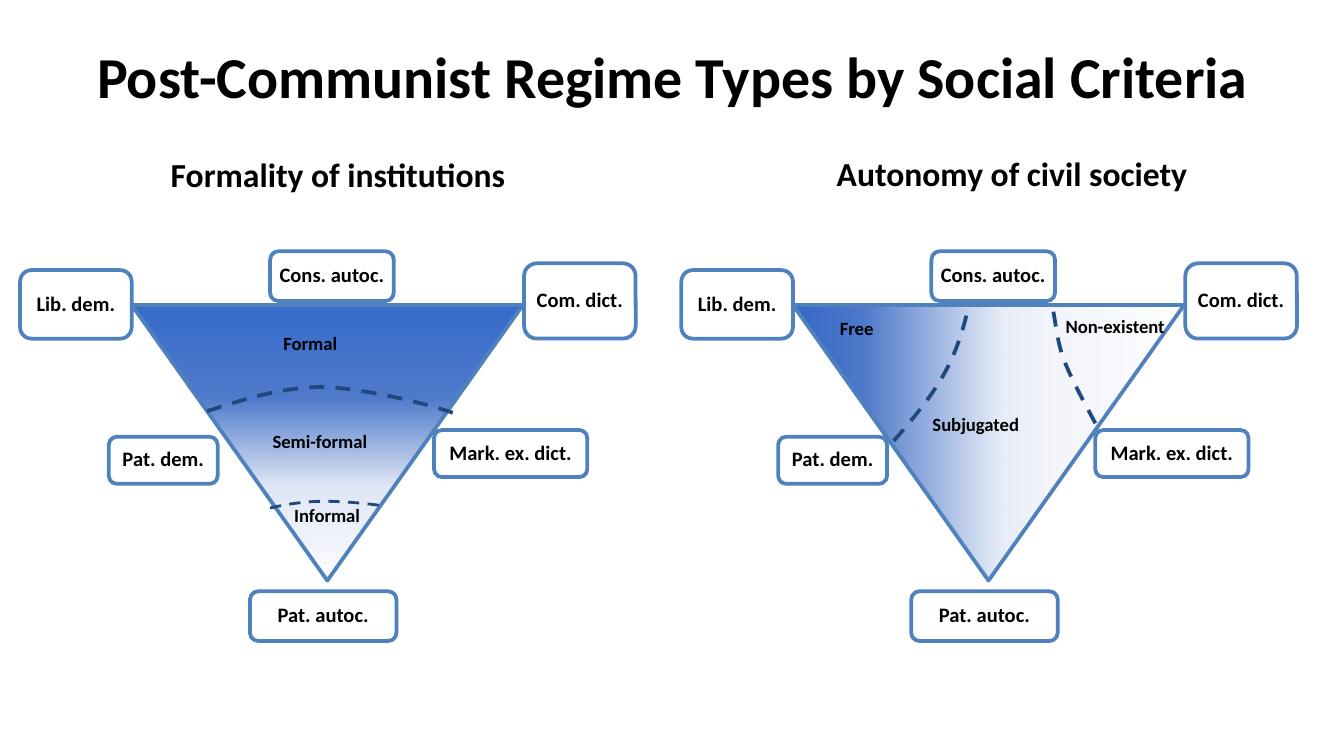
"""Build a slide of two triangles that place regime types by social criteria."""
import lxml.etree
import pptx
import pptx.dml.color
import pptx.enum.dml
import pptx.enum.shapes
import pptx.enum.text
import pptx.oxml.ns
import pptx.util

Inches = pptx.util.Inches
Pt = pptx.util.Pt
RGB = pptx.dml.color.RGBColor.from_string
Shape = pptx.enum.shapes.MSO_SHAPE
Align = pptx.enum.text.PP_ALIGN
Anchor = pptx.enum.text.MSO_ANCHOR
qn = pptx.oxml.ns.qn

theme = dict(
    font="Calibri", ink="000000", paper="FFFFFF", edge="4F81BD", arc="1F497D",
    title=31, head=18, box=11, label=10,
    fall=[(0, "376CCA", 100), (33, "4E78CA", 100), (66, "DFE7F5", 100),
          (82, "EDF1F9", 100), (100, "FFFFFF", 100)],
    fade=[(0, "3468C5", 100), (18, "4E78CA", 100), (53, "E6ECF7", 100),
          (65, "F0F3FA", 86), (100, "FFFFFF", 100)],
)


def write(shape, text, size, align=Align.LEFT, anchor=Anchor.TOP,
          pad=(0.1, 0.05, 0.1, 0.05), space=1.0):
    frame = shape.text_frame
    frame.word_wrap = True
    frame.vertical_anchor = anchor
    frame.margin_left, frame.margin_top, frame.margin_right, frame.margin_bottom = map(Inches, pad)
    para = frame.paragraphs[0]
    para.alignment = align
    para.line_spacing = space
    run = para.add_run()
    run.text = text
    run.font.name = theme["font"]
    run.font.size = Pt(size)
    run.font.bold = True
    run.font.color.rgb = RGB(theme["ink"])


def tint(node, color, alpha=100):
    clr = lxml.etree.SubElement(node, qn("a:srgbClr"), val=color)
    if alpha < 100:
        lxml.etree.SubElement(clr, qn("a:alpha"), val=str(alpha * 1000))


deck = pptx.Presentation()
deck.slide_width = Inches(10)
deck.slide_height = Inches(10 * 9 / 16)
slide = deck.slides.add_slide(deck.slide_layouts[5])

title = slide.shapes.title
title.left, title.top, title.width, title.height = map(Inches, (0, 0.06, 10, 1))
write(title, "Post-Communist Regime Types by Social Criteria", theme["title"],
      align=Align.CENTER, anchor=Anchor.MIDDLE)

boxes = [
    ("Com. dict.", 3.9, 1.96, 0.83, 0.56),
    ("Lib. dem.", 0.15, 2.01, 0.83, 0.51),
    ("Pat. autoc.", 1.86, 4.4, 1.09, 0.37),
    ("Cons. autoc.", 2.01, 1.87, 0.92, 0.37),
    ("Mark. ex. dict.", 3.23, 3.2, 1.14, 0.35),
    ("Pat. dem.", 0.81, 3.25, 0.81, 0.35),
]
panels = [
    dict(
        shift=0, nudge=0, angle=90, stops=theme["fall"],
        head=("Formality of institutions", 0.94, 1.1, 3.15),
        arcs=[
            (2, [(1.54, 3.06), (1.82, 2.97), (2.1, 2.88), (2.41, 2.88),
                 (2.71, 2.89), (3.21, 3.01), (3.39, 3.08)]),
            (1.5, [(2.01, 3.78), (2.14, 3.75), (2.27, 3.73), (2.42, 3.73),
                   (2.56, 3.73), (2.79, 3.75), (2.87, 3.77)]),
        ],
        labels=[("Informal", 2.09, 3.7, 0.87, 0.27),
                ("Semi-formal", 1.93, 3.15, 1.1, 0.27),
                ("Formal", 2.01, 2.42, 1.18, 0.27)],
    ),
    dict(
        shift=4.92, nudge=0.06, angle=0, stops=theme["fade"],
        head=("Autonomy of civil society", 5.72, 1.09, 3.62),
        arcs=[
            (2, [(8.15, 3.15), (8.06, 2.98), (7.96, 2.8), (7.91, 2.66),
                 (7.86, 2.52), (7.85, 2.35), (7.83, 2.29)]),
            (2, [(6.65, 3.28), (6.79, 3.12), (6.93, 2.95), (7.02, 2.79),
                 (7.12, 2.62), (7.19, 2.38), (7.2, 2.29)]),
        ],
        labels=[("Non-existent", 7.83, 2.29, 0.94, 0.44),
                ("Free", 6.15, 2.31, 0.58, 0.27),
                ("Subjugated", 6.84, 3.02, 1.04, 0.27)],
    ),
]

for panel in panels:
    group = slide.shapes.add_group_shape().shapes

    cone = group.add_shape(Shape.ISOSCELES_TRIANGLE, Inches(0.98 + panel["shift"]),
                           Inches(2.27), Inches(2.91), Inches(2.05))
    cone.rotation = 180
    cone.shadow.inherit = False
    cone.line.color.rgb = RGB(theme["edge"])
    cone.line.width = Pt(2)
    cone.fill.gradient()
    grad = cone.element.spPr.find(qn("a:gradFill"))
    grad.set("rotWithShape", "0")
    grad.find(qn("a:lin")).set("ang", str(panel["angle"] * 60000))
    stops = grad.find(qn("a:gsLst"))
    for stop in list(stops):
        stops.remove(stop)
    for place, color, alpha in panel["stops"]:
        stop = lxml.etree.SubElement(stops, qn("a:gs"), pos=str(place * 1000))
        tint(stop, color, alpha)

    for text, left, top, width, height in boxes:
        left += panel["shift"] + (panel["nudge"] if text == "Pat. dem." else 0)
        box = group.add_shape(Shape.ROUNDED_RECTANGLE, Inches(left), Inches(top),
                              Inches(width), Inches(height))
        box.shadow.inherit = False
        box.line.color.rgb = RGB(theme["edge"])
        box.line.width = Pt(2)
        box.fill.solid()
        tint(box.element.spPr.find(qn("a:solidFill")), theme["paper"], 90)
        write(box, text, theme["box"], align=Align.CENTER, anchor=Anchor.MIDDLE,
              pad=(0.05,) * 4, space=0.9)

    for weight, points in panel["arcs"]:
        points = [(Inches(x), Inches(y)) for x, y in points]
        pen = group.build_freeform(*points[0])
        pen.add_line_segments(points[1:], close=False)
        arc = pen.convert_to_shape()
        arc.shadow.inherit = False
        arc.fill.background()
        arc.line.color.rgb = RGB(theme["arc"])
        arc.line.width = Pt(weight)
        arc.line.dash_style = pptx.enum.dml.MSO_LINE.DASH
        track = next(arc.element.iter(qn("a:path")))
        steps = track.findall(qn("a:lnTo"))
        for start in range(0, len(steps), 3):
            curve = lxml.etree.SubElement(track, qn("a:cubicBezTo"))
            for step in steps[start:start + 3]:
                curve.append(step[0])
                track.remove(step)

    for text, *rect in panel["labels"]:
        label = group.add_textbox(*map(Inches, rect))
        write(label, text, theme["label"], pad=(0.1, 0.05, 0, 0.05))

    text, *rect = panel["head"]
    head = group.add_textbox(*map(Inches, rect), Inches(0.4))
    write(head, text, theme["head"], align=Align.CENTER)

deck.save("out.pptx")
